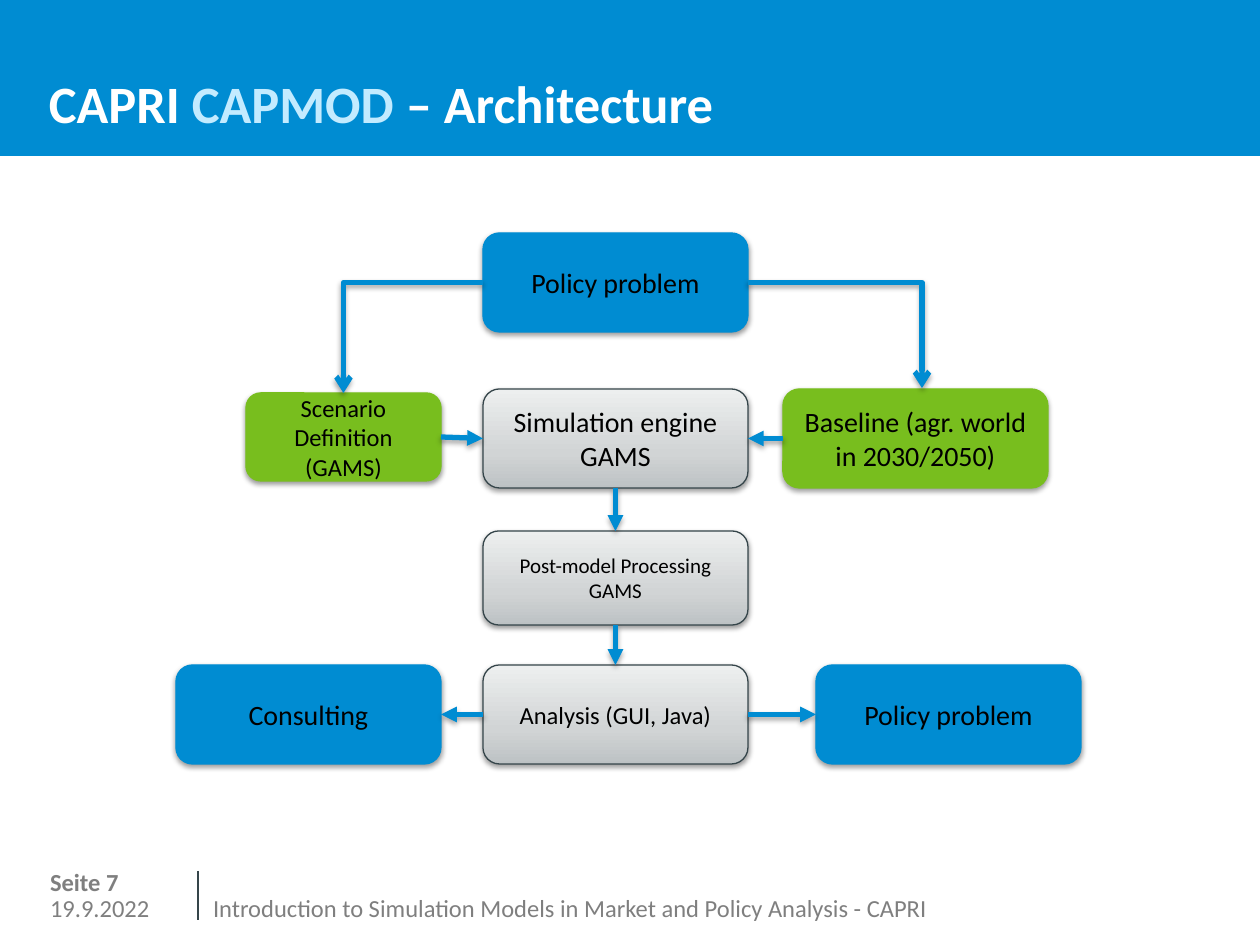
from copy import deepcopy

from lxml import etree
from pptx import Presentation
from pptx.dml.color import RGBColor
from pptx.enum.shapes import MSO_CONNECTOR, MSO_SHAPE
from pptx.enum.text import MSO_ANCHOR, PP_ALIGN
from pptx.oxml.ns import qn
from pptx.util import Pt

PX = 914400 / 126
FONT = "Calibri"
BLUE = RGBColor(0x00, 0x8C, 0xD2)
PALE_BLUE = RGBColor(0xC3, 0xEB, 0xFF)
GREEN = RGBColor(0x78, 0xBE, 0x1E)
SLATE = RGBColor(0x35, 0x45, 0x4A)
GREY = RGBColor(0x7F, 0x7F, 0x7F)
BLACK = RGBColor(0, 0, 0)
WHITE = RGBColor(0xFF, 0xFF, 0xFF)
METAL = [(0, RGBColor(0xBD, 0xC2, 0xC4)), (0.35, RGBColor(0xD1, 0xD4, 0xD5)),
         (1, RGBColor(0xED, 0xEF, 0xEF))]

ROUND_RECT, RECT = MSO_SHAPE.ROUNDED_RECTANGLE, MSO_SHAPE.RECTANGLE
STRAIGHT, ELBOW = MSO_CONNECTOR.STRAIGHT, MSO_CONNECTOR.ELBOW
TOP, LEFT, BOTTOM, RIGHT = range(4)  # connection sites of a box
CENTER = PP_ALIGN.CENTER
MIDDLE, ANCHOR_TOP, ANCHOR_BOTTOM = MSO_ANCHOR.MIDDLE, MSO_ANCHOR.TOP, MSO_ANCHOR.BOTTOM


def px(*values):
    return [round(v * PX) for v in values]


def style(run, size, color, bold=False):
    font = run.font
    font.name, font.size, font.bold = FONT, Pt(size), bold
    font.color.rgb = color


def add_shadow(effects, dist, alpha):
    outer = etree.SubElement(effects, qn("a:outerShdw"), blurRad=str(Pt(3.1)),
                             dist=str(Pt(dist)), dir="5400000", rotWithShape="0")
    color = etree.SubElement(outer, qn("a:srgbClr"), val="000000")
    etree.SubElement(color, qn("a:alpha"), val=str(alpha * 1000))


def fill_metal(sp):
    fill = sp.fill
    fill.gradient()
    fill.gradient_angle = 90
    stops = sp.element.spPr.find(".//" + qn("a:gsLst"))
    stops.insert(1, deepcopy(stops[0]))
    for stop, (position, color) in zip(fill.gradient_stops, METAL):
        stop.position = position
        stop.color.rgb = color


def add_box(s, text, at, size, color=None):
    """Add a rounded box; without a color it is metallic grey."""
    sp = s.shapes.add_shape(ROUND_RECT, *px(*at))
    if color is None:
        fill_metal(sp)
    else:
        sp.fill.solid()
        sp.fill.fore_color.rgb = color
    sp.line.color.rgb = color or SLATE
    sp.line.width = Pt(0.75)
    sp.shadow.inherit = False
    add_shadow(sp.element.spPr.find(qn("a:effectLst")), 1.6, 38)
    tf = sp.text_frame
    tf.text = text
    tf.word_wrap = True
    tf.vertical_anchor = MIDDLE
    for p in tf.paragraphs:
        p.alignment = CENTER
        style(p.runs[0], size, BLACK)
    return sp


def add_line(s, kind, start, end, color, width):
    line = s.shapes.add_connector(kind, *px(*start, *end))
    line.line.color.rgb = color
    line.line.width = Pt(width)
    effects = etree.SubElement(line.element.spPr, qn("a:effectLst"))
    return line, effects


def add_arrow(s, start, start_site, end, end_site):
    """Join two boxes; an end given as a point gets a free end."""
    bent = start_site in (LEFT, RIGHT) and end_site == TOP
    free = isinstance(end, tuple)
    arrow, effects = add_line(s, ELBOW if bent else STRAIGHT, (0, 0),
                              end if free else (0, 0), BLUE, 3)
    arrow.begin_connect(start, start_site)
    if not free:
        arrow.end_connect(end, end_site)
    if bent:
        arrow.element.spPr.find(qn("a:prstGeom")).set("prst", "bentConnector2")
    etree.SubElement(arrow.element.spPr.find(qn("a:ln")), qn("a:tailEnd"),
                     type="arrow" if bent else "triangle")
    add_shadow(effects, 1.8, 35)


def add_text(s, at, runs, size, anchor=ANCHOR_TOP, spacing=None):
    """Add one paragraph made of (text, color, bold) runs."""
    tf = s.shapes.add_textbox(*px(*at)).text_frame
    tf.word_wrap = True
    tf.margin_left = tf.margin_right = tf.margin_top = tf.margin_bottom = 0
    tf.vertical_anchor = anchor
    p = tf.paragraphs[0]
    p.line_spacing = spacing
    for text, color, bold in runs:
        r = p.add_run()
        r.text = text
        style(r, size, color, bold)


def add_header(s):
    band = s.shapes.add_shape(RECT, *px(0, -2, 1260, 158))
    band.fill.solid()
    band.fill.fore_color.rgb = BLUE
    band.line.fill.background()
    band.shadow.inherit = False
    add_text(s, (49, 0, 1160, 134),
             [("CAPRI ", WHITE, True), ("CAPMOD", PALE_BLUE, True),
              (" – Architecture", WHITE, True)], 30, ANCHOR_BOTTOM, Pt(35))


def add_footer(s):
    add_text(s, (50, 867, 134, 25), [("Seite 7", GREY, True)], 14)
    add_text(s, (50, 893, 134, 35), [("19.9.2022", GREY, False)], 14)
    add_line(s, STRAIGHT, (198, 871), (198, 920), SLATE, 0.75)
    add_text(s, (213, 893, 835, 38),
             [("Introduction to Simulation Models in Market and Policy Analysis - CAPRI",
               GREY, False)], 14)


def add_flowchart(s):
    mid, w, h = 483, 265, 99
    problem = add_box(s, "Policy problem", (mid, 233, w, h), 16, BLUE)
    scenario = add_box(s, "Scenario\nDefinition\n(GAMS)", (246, 393, 195, 88), 14, GREEN)
    engine = add_box(s, "Simulation engine GAMS", (mid, 389, w, h), 16)
    baseline = add_box(s, "Baseline (agr. world in 2030/2050)", (783, 389, w, h), 16, GREEN)
    post = add_box(s, "Post-model Processing GAMS", (mid, 531, w, 94), 12)
    analysis = add_box(s, "Analysis (GUI, Java)", (mid, 665, w, h), 14)
    consulting = add_box(s, "Consulting", (176, 665, w, h), 16, BLUE)
    feedback = add_box(s, "Policy problem", (816, 665, w, h), 16, BLUE)
    for link in [(problem, LEFT, scenario, TOP), (problem, RIGHT, (922, 388), TOP),
                 (scenario, RIGHT, engine, LEFT), (baseline, LEFT, engine, RIGHT),
                 (engine, BOTTOM, post, TOP), (post, BOTTOM, analysis, TOP),
                 (analysis, LEFT, consulting, RIGHT), (analysis, RIGHT, feedback, LEFT)]:
        add_arrow(s, *link)


def main():
    prs = Presentation()
    prs.slide_width, prs.slide_height = px(1260, 945)
    s = prs.slides.add_slide(prs.slide_layouts[6])
    add_header(s)
    add_flowchart(s)
    add_footer(s)
    prs.save("out.pptx")


if __name__ == "__main__":
    main()
